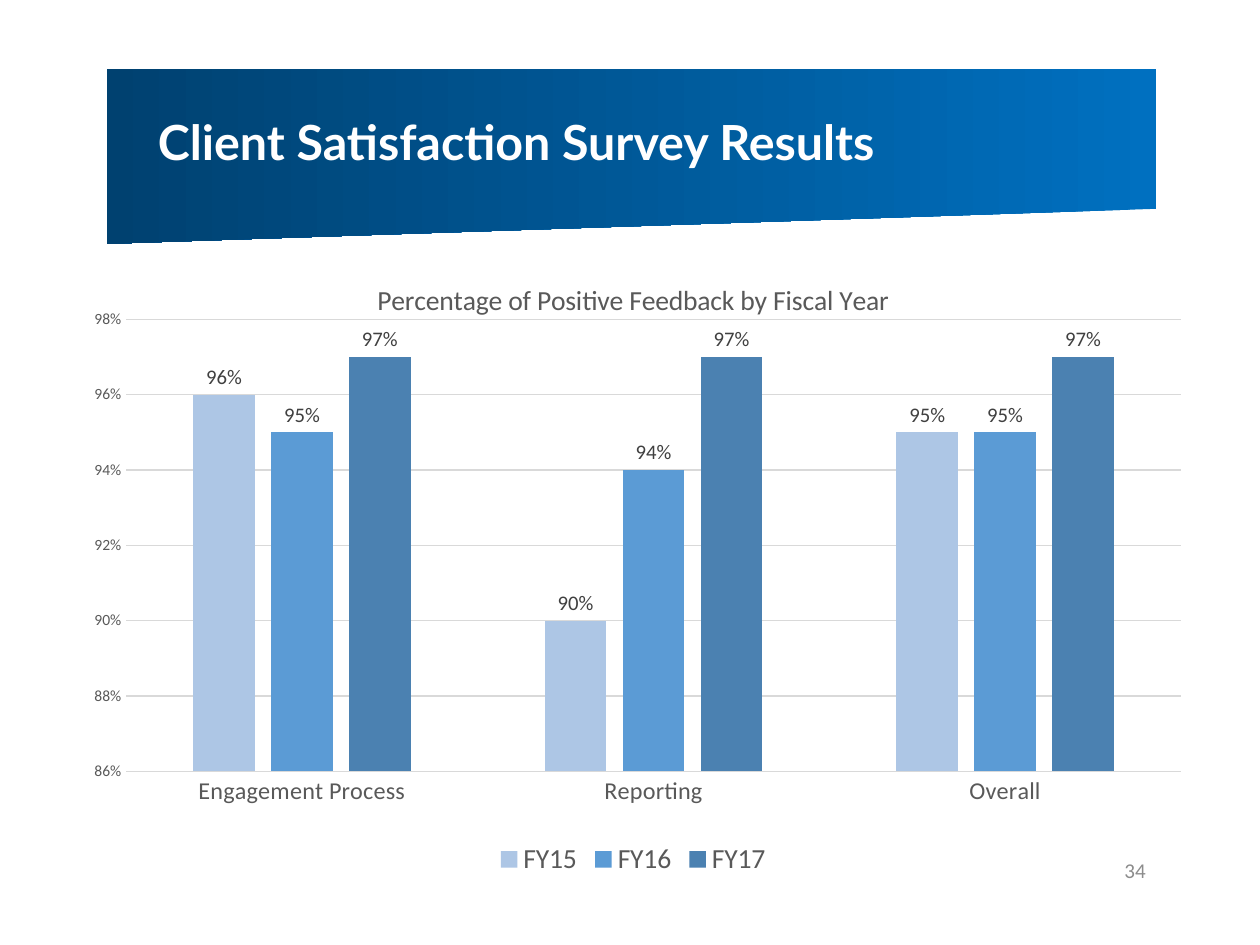
from lxml.etree import SubElement
from pptx import Presentation
from pptx.chart.data import CategoryChartData
from pptx.dml.color import RGBColor
from pptx.enum.chart import XL_CHART_TYPE, XL_LABEL_POSITION, XL_LEGEND_POSITION, XL_TICK_MARK
from pptx.enum.shapes import MSO_SHAPE
from pptx.enum.text import MSO_ANCHOR, PP_ALIGN
from pptx.oxml.ns import qn
from pptx.util import Cm, Pt

COLORS = {
    "banner_light": "0070C0",
    "banner_dark": "004170",
    "heading": "FFFFFF",
    "page_number": "8C8C8C",
    "axis_text": "595959",
    "label_text": "404040",
    "grid": "D9D9D9",
    "FY15": "ADC6E5",
    "FY16": "5B9BD5",
    "FY17": "4B81B1",
}
AREAS = ["Engagement Process", "Reporting", "Overall"]
FEEDBACK = {
    "FY15": [0.96, 0.90, 0.95],
    "FY16": [0.95, 0.94, 0.95],
    "FY17": [0.97, 0.97, 0.97],
}


def color(name):
    return RGBColor.from_string(COLORS[name])


def style(font, size, color_name, face="Calibri", bold=False):
    font.name = face
    font.size = Pt(size)
    font.bold = bold
    font.color.rgb = color(color_name)


def write(frame, text, align, *font_style):
    frame.word_wrap = True
    frame.vertical_anchor = MSO_ANCHOR.MIDDLE
    paragraph = frame.paragraphs[0]
    paragraph.alignment = align
    run = paragraph.add_run()
    run.text = text
    style(run.font, *font_style)
    return paragraph


def set_layout(parent, index, **settings):
    for old in parent.findall(qn("c:layout")):
        parent.remove(old)
    layout = SubElement(parent, qn("c:layout"))
    manual = SubElement(layout, qn("c:manualLayout"))
    for tag, value in settings.items():
        SubElement(manual, qn(f"c:{tag}")).set("val", str(value))
    parent.insert(index, layout)


def add_banner(slide, left, top, width, height):
    banner = slide.shapes.add_shape(
        MSO_SHAPE.FLOWCHART_MANUAL_INPUT, left, top, width, height)
    banner.rotation = 180
    banner.shadow.inherit = False
    banner.line.fill.background()
    banner.fill.gradient()
    banner.fill.gradient_angle = 0
    for stop, name in zip(banner.fill.gradient_stops, ("banner_light", "banner_dark")):
        stop.color.rgb = color(name)

    heading = slide.shapes.title
    heading.element.addprevious(banner.element)
    heading.left, heading.top = left + Cm(0.79), top + Cm(0.18)
    heading.width, heading.height = Cm(17.25), Cm(2.74)
    paragraph = write(heading.text_frame, "Client Satisfaction Survey Results",
                      PP_ALIGN.LEFT, 28, "heading", "Lato", True)
    paragraph.line_spacing = 0.9


def format_axes(chart):
    areas = chart.category_axis
    areas.major_tick_mark = XL_TICK_MARK.NONE
    areas.format.line.color.rgb = color("grid")
    areas.format.line.width = Pt(0.75)
    style(areas.tick_labels.font, 14, "axis_text")

    percent = chart.value_axis
    percent.minimum_scale, percent.maximum_scale = 0.86, 0.98
    percent.major_unit = 0.02
    percent.major_tick_mark = XL_TICK_MARK.NONE
    percent.format.line.fill.background()
    percent.major_gridlines.format.line.color.rgb = color("grid")
    percent.major_gridlines.format.line.width = Pt(0.75)
    percent.tick_labels.number_format = "0%"
    percent.tick_labels.number_format_is_linked = False
    style(percent.tick_labels.font, 9, "axis_text")


def format_years(plot):
    plot.gap_width = 219
    plot.overlap = -27
    plot.vary_by_categories = False
    for year in plot.series:
        year.format.fill.solid()
        year.format.fill.fore_color.rgb = color(year.name)
        labels = year.data_labels
        labels.show_value = True
        labels.position = XL_LABEL_POSITION.OUTSIDE_END
        labels.number_format = "0%"
        labels.number_format_is_linked = False
        style(labels.font, 12, "label_text")


def add_feedback_chart(slide, left, top, width, height):
    feedback = CategoryChartData(number_format="0%")
    feedback.categories = AREAS
    for year, shares in FEEDBACK.items():
        feedback.add_series(year, shares)
    chart = slide.shapes.add_chart(
        XL_CHART_TYPE.COLUMN_CLUSTERED, left, top, width, height, feedback).chart
    chart.font.name = "Calibri"
    chart.font.size = Pt(10)

    chart.has_title = True
    caption = chart.chart_title
    run = caption.text_frame.paragraphs[0].add_run()
    run.text = "Percentage of Positive Feedback by Fiscal Year"
    style(run.font, 16, "axis_text")
    caption.include_in_layout = False
    set_layout(caption.format.parent if hasattr(caption.format, "parent") else caption.element,
               1, xMode="edge", yMode="edge", x=0.27, y=0.04)

    chart.has_legend = True
    chart.legend.position = XL_LEGEND_POSITION.BOTTOM
    chart.legend.include_in_layout = False
    style(chart.legend.font, 16, "axis_text")

    format_axes(chart)
    format_years(chart.plots[0])
    set_layout(chart.element.find(".//" + qn("c:plotArea")), 0,
               layoutTarget="inner", xMode="edge", yMode="edge",
               x=0.053, y=0.108, w=0.93, h=0.717)


def add_page_number(slide, left, top, width, height):
    number = slide.shapes.add_textbox(left, top, width, height)
    write(number.text_frame, "34", PP_ALIGN.RIGHT, 12.2, "page_number")


def main():
    deck = Presentation()
    deck.slide_width, deck.slide_height = Cm(25.73), Cm(19.3)
    slide = deck.slides.add_slide(deck.slide_layouts[5])
    add_banner(slide, Cm(2.18), Cm(1.4), Cm(21.44), Cm(3.58))
    add_page_number(slide, Cm(17.86), Cm(17.27), Cm(5.79), Cm(1.02))
    add_feedback_chart(slide, Cm(1.35), Cm(5.13), Cm(23.16), Cm(12.88))
    deck.save("out.pptx")


if __name__ == "__main__":
    main()
